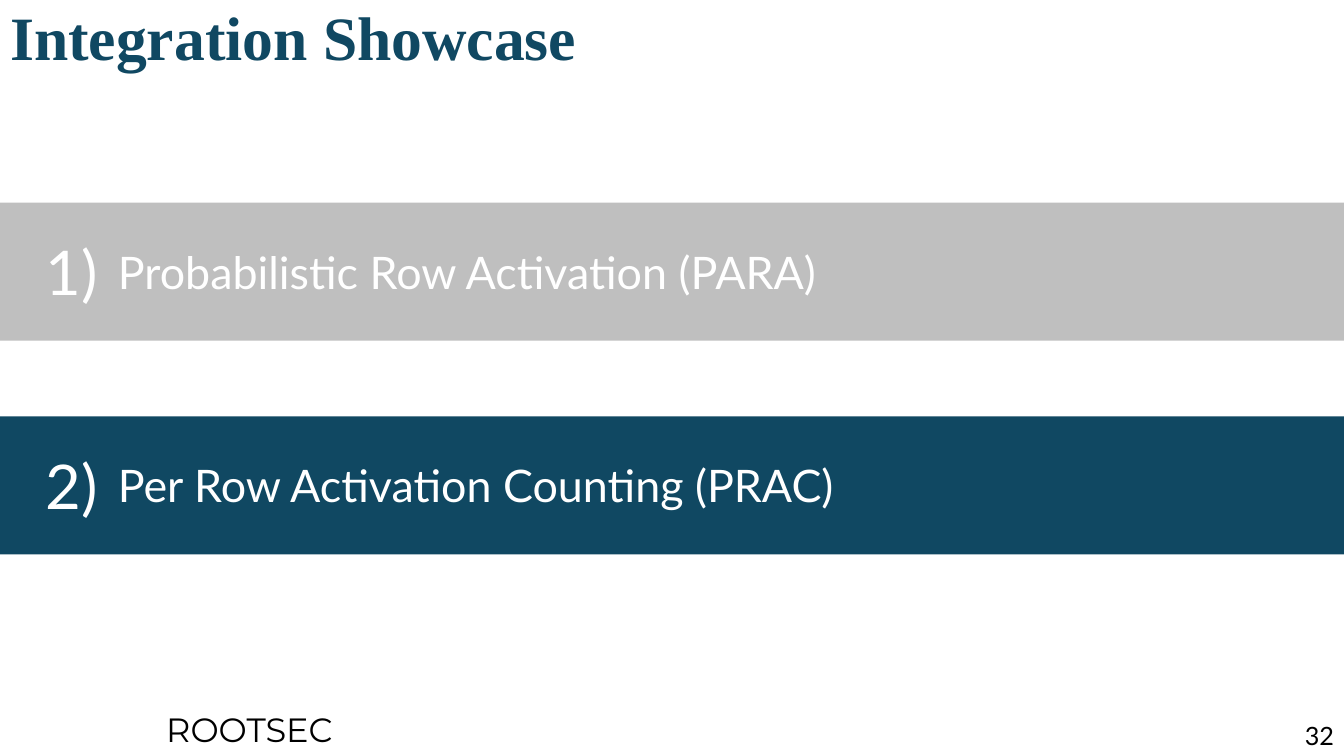
from pptx import Presentation
from pptx.dml.color import RGBColor
from pptx.enum.shapes import MSO_SHAPE
from pptx.enum.text import MSO_ANCHOR, MSO_AUTO_SIZE, PP_ALIGN
from pptx.util import Pt

PX = 9144
PAGE_WIDTH, PAGE_HEIGHT = 1333, 750
BAND_TOP, BAND_HEIGHT, BAND_STEP = 201, 137, 212

NAVY = RGBColor(0x10, 0x48, 0x62)
GREY = RGBColor(0xBF, 0xBF, 0xBF)
WHITE = RGBColor(0xFF, 0xFF, 0xFF)
BLACK = RGBColor(0x00, 0x00, 0x00)

RECTANGLE = MSO_SHAPE.RECTANGLE
TOP, MIDDLE = MSO_ANCHOR.TOP, MSO_ANCHOR.MIDDLE
LEFT, CENTER, RIGHT = PP_ALIGN.LEFT, PP_ALIGN.CENTER, PP_ALIGN.RIGHT
NO_FIT, GROW = MSO_AUTO_SIZE.NONE, MSO_AUTO_SIZE.SHAPE_TO_FIT_TEXT

TOPICS = [
    ("1)", "Probabilistic Row Activation (PARA)", GREY),
    ("2)", "Per Row Activation Counting (PRAC)", NAVY),
]


def scaled(box):
    return [length * PX for length in box]


def write(frame, text, font, size, color, align=LEFT, bold=False):
    para = frame.paragraphs[0]
    para.alignment = align
    span = para.add_run()
    span.text = text
    span.font.name = font
    span.font.size = Pt(size)
    span.font.bold = bold
    span.font.color.rgb = color
    return para


def add_label(page, box, text, font, size, color, align=LEFT, anchor=TOP, wrap=True):
    frame = page.shapes.add_textbox(*scaled(box)).text_frame
    frame.word_wrap = wrap
    frame.auto_size = GROW
    frame.vertical_anchor = anchor
    write(frame, text, font, size, color, align)


def add_title(page, box, text):
    title = page.shapes.title
    title.left, title.top, title.width, title.height = scaled(box)
    frame = title.text_frame
    frame.auto_size = NO_FIT
    frame.vertical_anchor = MIDDLE
    para = write(frame, text, "Times New Roman", 44, NAVY, bold=True)
    para.line_spacing = 0.9


def add_band(page, box, number, topic, fill):
    left, top, width, height = box
    band = page.shapes.add_shape(RECTANGLE, *scaled(box))
    band.shadow.inherit = False
    band.fill.solid()
    band.fill.fore_color.rgb = fill
    band.line.fill.background()
    for text, size, offset, label_width, label_height, align in (
        (number, 44, 23, 96, 84, CENTER),
        (topic, 32, 107, 921, 64, LEFT),
    ):
        label_top = top + (height - label_height) // 2
        label_box = (left + offset, label_top, label_width, label_height)
        add_label(page, label_box, text, "Lato", size, WHITE, align, MIDDLE)


def add_footer(page, box):
    left, top, width, height = box
    add_label(page, (left + 155, top, 191, 50), "ROOTSEC", "Montserrat", 24, BLACK, wrap=False)
    add_label(page, (left + width - 75, top + 12, 75, 40), "32", "Lato", 18, BLACK, RIGHT)


def main():
    deck = Presentation()
    deck.slide_width, deck.slide_height = scaled((PAGE_WIDTH, PAGE_HEIGHT))
    page = deck.slides.add_slide(deck.slide_layouts[5])
    add_title(page, (0, 0, PAGE_WIDTH, 80), "Integration Showcase")
    for index, (number, topic, fill) in enumerate(TOPICS):
        box = (0, BAND_TOP + index * BAND_STEP, PAGE_WIDTH, BAND_HEIGHT)
        add_band(page, box, number, topic, fill)
    add_footer(page, (0, 698, PAGE_WIDTH, 52))
    deck.save("out.pptx")


if __name__ == "__main__":
    main()
